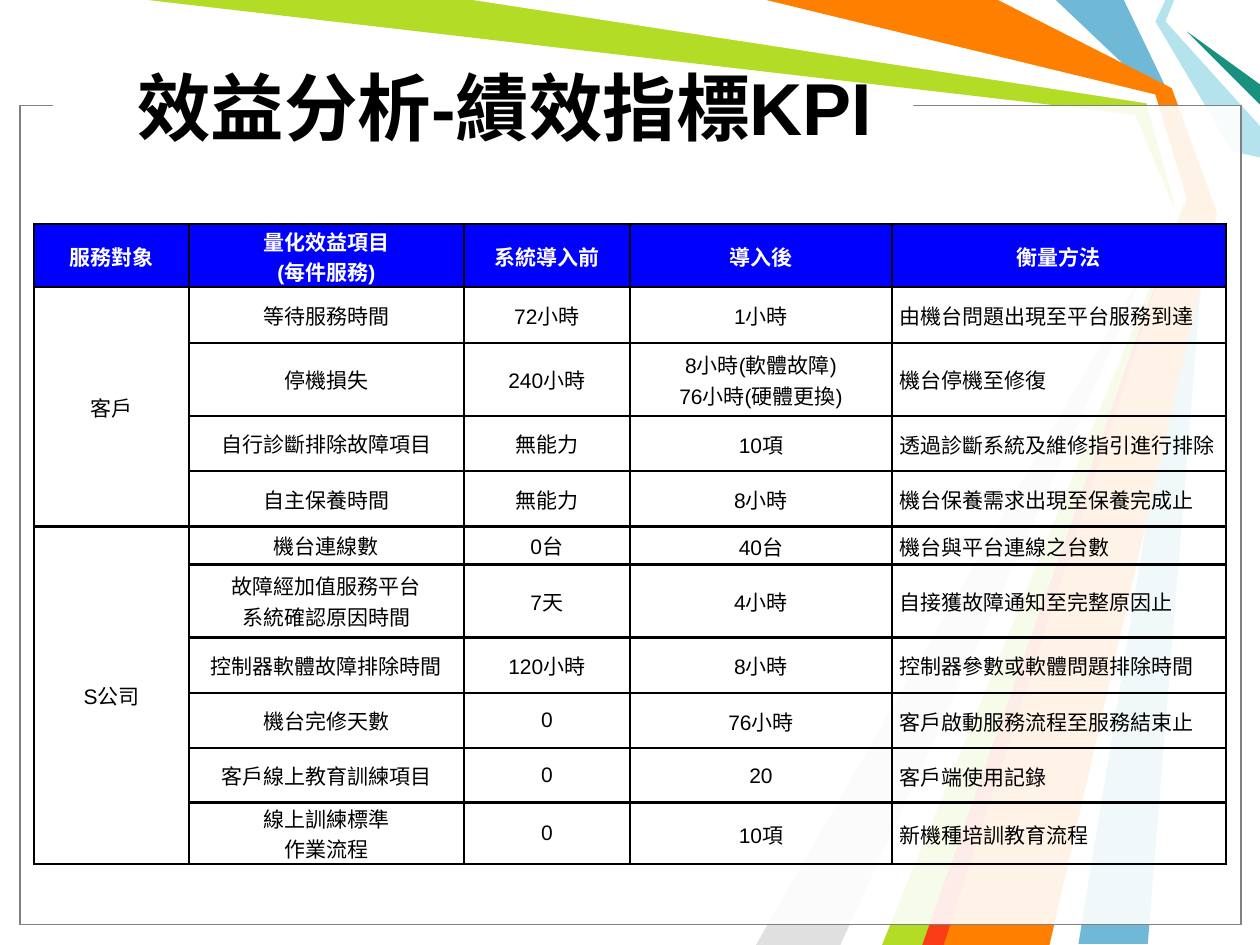
from typing import NamedTuple
from lxml.etree import SubElement
from pptx import Presentation
from pptx.dml.color import RGBColor
from pptx.enum.shapes import MSO_SHAPE as Shape
from pptx.enum.text import MSO_ANCHOR as Anchor, PP_ALIGN as Align
from pptx.oxml import parse_xml
from pptx.oxml.ns import nsdecls, qn
from pptx.util import Inches, Pt

COLS, ROWS = 10, 7.5
FONT = "Arial"
BLACK, WHITE, BLUE = "000000", "FFFFFF", "0000FF"


class Ribbon(NamedTuple):
    color: str
    points: list[tuple[float, float]]


class Panel(NamedTuple):
    box: tuple[float, float, float, float]
    opacity: int = 100
    line: str | None = None


class Column(NamedTuple):
    width: float
    align: Align
    pad_x: float
    pad_top: float


class Group(NamedTuple):
    name: str
    rows: list[tuple[float, str, str, str, str]]


RIBBONS = [
    Ribbon("6FB9D7", [(8.92, 0), (9.29, 0.77), (9.58, 1.67), (9.11, 7.49), (8.56, 7.49),
                      (9.5, 1.67), (9.17, 0.75), (8.38, 0)]),
    Ribbon("B3DC27", [(1.17, 0), (3.83, 0), (9.14, 0.78), (9.42, 1.69), (7.42, 7.5),
                      (6.92, 7.5), (9.35, 1.73), (9.01, 0.91)]),
    Ribbon("E0E0E0", [(6.67, 7.5), (9.27, 1.81), (6, 7.5)]),
    Ribbon(WHITE, [(3.75, 0), (9.1, 0.82), (9.32, 1.62), (6.75, 7.5), (7, 7.5),
                   (9.41, 1.58), (9.17, 0.75), (6, 0)]),
    Ribbon("B4E3EE", [(9.25, 0), (9.17, 0.17), (9.78, 1.2), (10, 1.25), (10, 1),
                      (9.25, 0.17), (9.32, 0)]),
    Ribbon("189180", [(10, 0.83), (9.42, 0.25), (10, 0.67)]),
    Ribbon("FF7F00", [(6.08, 0), (7.92, 0), (9.3, 0.7), (9.66, 1.69), (8.33, 7.5),
                      (7.33, 7.5), (9.42, 1.58), (9.17, 0.75)]),
    Ribbon("F93D17", [(7.32, 7.5), (9.32, 1.83), (7.49, 7.5)]),
]
FRAME = (0.16, 0.84, 9.69, 6.5)
PANELS = [
    Panel(FRAME, 69),
    Panel(FRAME, 69, "808080"),
    Panel((0.42, 0.74, 6.83, 0.17)),
]
COLUMNS = [
    Column(1.23, Align.CENTER, 0, 0),
    Column(2.18, Align.CENTER, 0, 0),
    Column(1.32, Align.CENTER, 0, 0),
    Column(2.08, Align.CENTER, 0.06, 0.01),
    Column(2.65, Align.JUSTIFY, 0.06, 0.01),
]
HEADER_HEIGHT = 0.5
HEADER = ["服務對象", "量化效益項目\n(每件服務)", "系統導入前", "導入後", "衡量方法"]
GROUPS = [
    Group("客戶", [
        (0.44, "等待服務時間", "72小時", "1小時", "由機台問題出現至平台服務到達"),
        (0.58, "停機損失", "240小時", "8小時(軟體故障)\n76小時(硬體更換)", "機台停機至修復"),
        (0.44, "自行診斷排除故障項目", "無能力", "10項", "透過診斷系統及維修指引進行排除"),
        (0.44, "自主保養時間", "無能力", "8小時", "機台保養需求出現至保養完成止"),
    ]),
    Group("S公司", [
        (0.3, "機台連線數", "0台", "40台", "機台與平台連線之台數"),
        (0.58, "故障經加值服務平台\n系統確認原因時間", "7天", "4小時", "自接獲故障通知至完整原因止"),
        (0.44, "控制器軟體故障排除時間", "120小時", "8小時", "控制器參數或軟體問題排除時間"),
        (0.44, "機台完修天數", "0", "76小時", "客戶啟動服務流程至服務結束止"),
        (0.43, "客戶線上教育訓練項目", "0", "20", "客戶端使用記錄"),
        (0.49, "線上訓練標準\n作業流程", "0", "10項", "新機種培訓教育流程"),
    ]),
]

prs = Presentation()
prs.slide_width, prs.slide_height = Inches(10), Inches(7.5)
s = prs.slides.add_slide(prs.slide_layouts[6])


def rgb(color: str) -> RGBColor:
    return RGBColor.from_string(color)


def across(cols: float) -> int:
    return round(prs.slide_width * cols / COLS)


def down(rows: float) -> int:
    return round(prs.slide_height * rows / ROWS)


def place(x: float, y: float, w: float, h: float) -> tuple[int, int, int, int]:
    return across(x), down(y), across(w), down(h)


def paint(sp, color: str, line: str | None = None) -> None:
    sp.shadow.inherit = False
    sp.fill.solid()
    sp.fill.fore_color.rgb = rgb(color)
    if line:
        sp.line.color.rgb = rgb(line)
        sp.line.width = Pt(0.75)
    else:
        sp.line.fill.background()


def draw_ribbon(ribbon: Ribbon) -> None:
    start, *rest = [(across(x), down(y)) for x, y in ribbon.points]
    builder = s.shapes.build_freeform(*start)
    builder.add_line_segments(rest, close=True)
    paint(builder.convert_to_shape(), ribbon.color)


def draw_panel(panel: Panel) -> None:
    sp = s.shapes.add_shape(Shape.RECTANGLE, *place(*panel.box))
    paint(sp, WHITE, panel.line)
    if panel.opacity < 100:
        color = sp._element.spPr.find(qn("a:solidFill"))[0]
        SubElement(color, qn("a:alpha"), val=str(panel.opacity * 1000))


def write(tf, text: str, size: float, color: str, bold: bool, align: Align) -> None:
    tf.text = text
    for p in tf.paragraphs:
        p.alignment = align
        p.font.name, p.font.size, p.font.bold = FONT, Pt(size), bold
        p.font.color.rgb = rgb(color)


def draw_title(text: str) -> None:
    tf = s.shapes.add_textbox(*place(0.99, 0.22, 6.89, 1.25)).text_frame
    tf.word_wrap = True
    tf.vertical_anchor = Anchor.MIDDLE
    write(tf, text, 42, BLACK, True, Align.LEFT)


def add_borders(cell) -> None:
    tc_pr = cell._tc.get_or_add_tcPr()
    for i, side in enumerate("LRTB"):
        tc_pr.insert(i, parse_xml(
            f'<a:ln{side} {nsdecls("a")} w="{Pt(1.5)}"><a:solidFill>'
            f'<a:srgbClr val="{BLACK}"/></a:solidFill></a:ln{side}>'))


def fill_cell(cell, text: str, column: Column, header: bool) -> None:
    pad_x, pad_top = (0.03, 0.01) if header else (column.pad_x, column.pad_top)
    cell.margin_left = cell.margin_right = across(pad_x)
    cell.margin_top, cell.margin_bottom = down(pad_top), 0
    cell.vertical_anchor = Anchor.MIDDLE
    if header:
        cell.fill.solid()
        cell.fill.fore_color.rgb = rgb(BLUE)
    else:
        cell.fill.background()
    add_borders(cell)
    write(cell.text_frame, text, 12, WHITE if header else BLACK, header,
          Align.CENTER if header else column.align)


def draw_table() -> None:
    heights, lines, spans = [HEADER_HEIGHT], [HEADER], []
    for group in GROUPS:
        spans.append((len(lines), len(lines) + len(group.rows) - 1))
        for i, (height, *texts) in enumerate(group.rows):
            heights.append(height)
            lines.append(["" if i else group.name, *texts])
    width = sum(c.width for c in COLUMNS)
    box = place(0.27, 1.78, width, sum(heights))
    table = s.shapes.add_table(len(lines), len(COLUMNS), *box).table
    table.first_row = table.horz_banding = False
    for col, column in zip(table.columns, COLUMNS):
        col.width = across(column.width)
    for r, (height, texts) in enumerate(zip(heights, lines)):
        table.rows[r].height = down(height)
        for c, (text, column) in enumerate(zip(texts, COLUMNS)):
            fill_cell(table.cell(r, c), text, column, r == 0)
    for first, last in spans:
        table.cell(first, 0).merge(table.cell(last, 0))


for ribbon in RIBBONS:
    draw_ribbon(ribbon)
for panel in PANELS:
    draw_panel(panel)
draw_title("效益分析-績效指標KPI")
draw_table()
prs.save("out.pptx")
